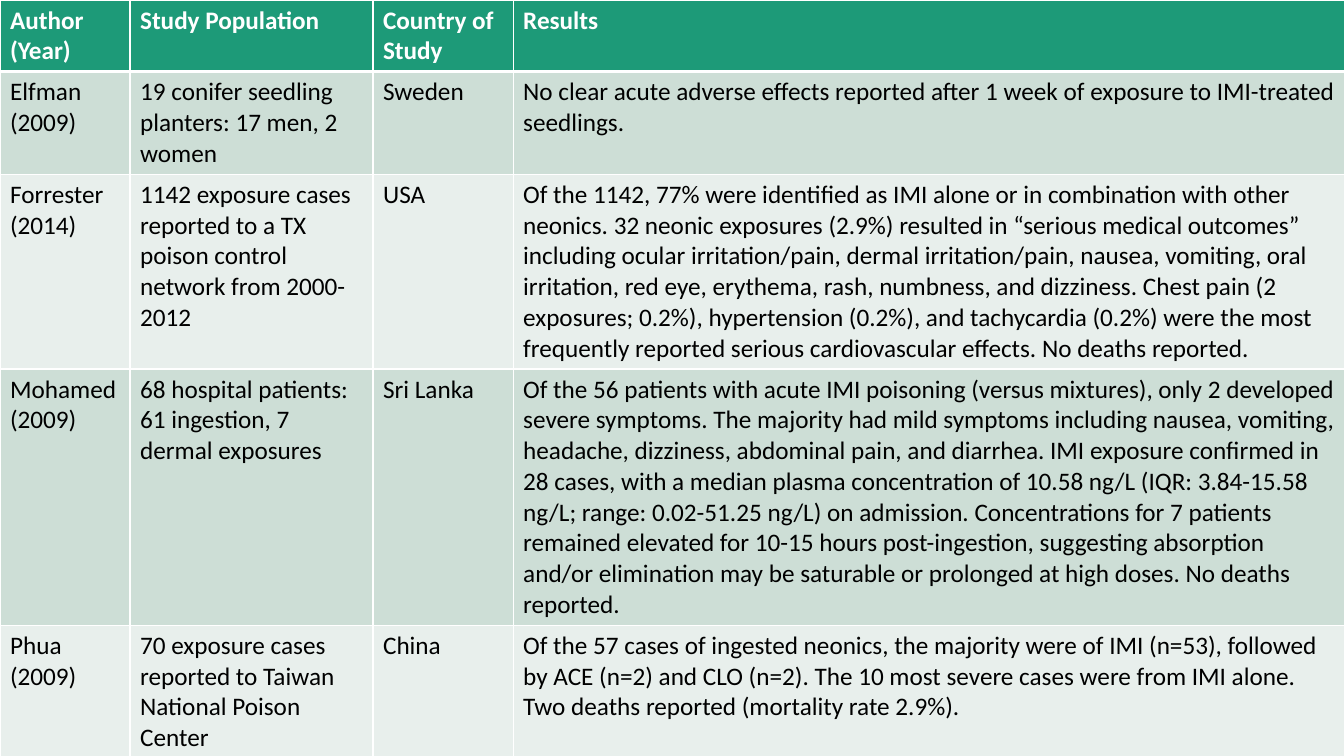
from lxml.etree import SubElement
from pptx import Presentation
from pptx.dml.color import RGBColor
from pptx.oxml.ns import qn
from pptx.util import Inches, Pt

HEADER_GREEN = RGBColor(0x1D, 0x9A, 0x78)
BAND_DARK = RGBColor(0xCD, 0xDE, 0xD6)
BAND_LIGHT = RGBColor(0xE8, 0xEF, 0xEC)
WHITE = RGBColor(0xFF, 0xFF, 0xFF)
BLACK = RGBColor(0, 0, 0)

STUDIES = [
    (["Author", "(Year)"], ["Study Population"], ["Country of Study"], ["Results"]),
    (
        ["Elfman", "(2009)"],
        ["19 conifer seedling planters: 17 men, 2 women"],
        ["Sweden"],
        ["No clear acute adverse effects reported after 1 week of exposure to "
         "IMI-treated seedlings."],
    ),
    (
        ["Forrester (2014)"],
        ["1142 exposure cases reported to a TX poison control network from 2000-2012"],
        ["USA"],
        ["Of the 1142, 77% were identified as IMI alone or in combination with other "
         "neonics. 32 neonic exposures (2.9%) resulted in “serious medical outcomes” "
         "including ocular irritation/pain, dermal irritation/pain, nausea, vomiting, "
         "oral irritation, red eye, erythema, rash, numbness, and dizziness. Chest pain "
         "(2 exposures; 0.2%), hypertension (0.2%), and tachycardia (0.2%) were the most "
         "frequently reported serious cardiovascular effects. No deaths reported."],
    ),
    (
        ["Mohamed (2009)"],
        ["68 hospital patients: 61 ingestion, 7 dermal exposures"],
        ["Sri Lanka"],
        ["Of the 56 patients with acute IMI poisoning (versus mixtures), only 2 developed "
         "severe symptoms. The majority had mild symptoms including nausea, vomiting, "
         "headache, dizziness, abdominal pain, and diarrhea. IMI exposure confirmed in 28 "
         "cases, with a median plasma concentration of 10.58 ng/L (IQR: 3.84-15.58 ng/L; "
         "range: 0.02-51.25 ng/L) on admission. Concentrations for 7 patients remained "
         "elevated for 10-15 hours post-ingestion, suggesting absorption and/or "
         "elimination may be saturable or prolonged at high doses. No deaths reported."],
    ),
    (
        ["Phua", "(2009)"],
        ["70 exposure cases reported to Taiwan National Poison Center"],
        ["China"],
        ["Of the 57 cases of ingested neonics, the majority were of IMI (n=53), followed "
         "by ACE (n=2) and CLO (n=2). The 10 most severe cases were from IMI alone. Two "
         "deaths reported (mortality rate 2.9%)."],
    ),
]
COLUMN_WIDTHS = [1.29, 2.41, 1.39, 8.25]
ROW_HEIGHTS = [0.71, 1.02, 1.93, 2.54, 1.21]


def set_borders(cell, top, bottom):
    properties = cell._tc.get_or_add_tcPr()
    for side, width in (("L", 1), ("R", 1), ("T", top), ("B", bottom)):
        border = SubElement(properties, qn(f"a:ln{side}"), w=str(Pt(width)))
        paint = SubElement(border, qn("a:solidFill"))
        SubElement(paint, qn("a:srgbClr"), val=str(WHITE))


def write_cell(cell, paragraphs, color, bold):
    frame = cell.text_frame
    for index, words in enumerate(paragraphs):
        paragraph = frame.add_paragraph() if index else frame.paragraphs[0]
        run = paragraph.add_run()
        run.text = words
        run.font.name = "Calibri"
        run.font.size = Pt(18)
        run.font.bold = bold
        run.font.color.rgb = color


def main():
    presentation = Presentation()
    presentation.slide_width = Inches(13.33)
    presentation.slide_height = Inches(7.5)
    slide = presentation.slides.add_slide(presentation.slide_layouts[6])
    studies = slide.shapes.add_table(
        len(STUDIES), len(COLUMN_WIDTHS), 0, 0,
        Inches(sum(COLUMN_WIDTHS)), Inches(sum(ROW_HEIGHTS)),
    ).table
    for column, width in zip(studies.columns, COLUMN_WIDTHS):
        column.width = Inches(width)
    for row, height in zip(studies.rows, ROW_HEIGHTS):
        row.height = Inches(height)

    for r, study in enumerate(STUDIES):
        header = r == 0
        band = HEADER_GREEN if header else (BAND_LIGHT, BAND_DARK)[r % 2]
        for c, paragraphs in enumerate(study):
            cell = studies.cell(r, c)
            set_borders(cell, top=3 if r == 1 else 1, bottom=3 if header else 1)
            cell.fill.solid()
            cell.fill.fore_color.rgb = band
            write_cell(cell, paragraphs, WHITE if header else BLACK, header)

    presentation.save("out.pptx")


if __name__ == "__main__":
    main()
